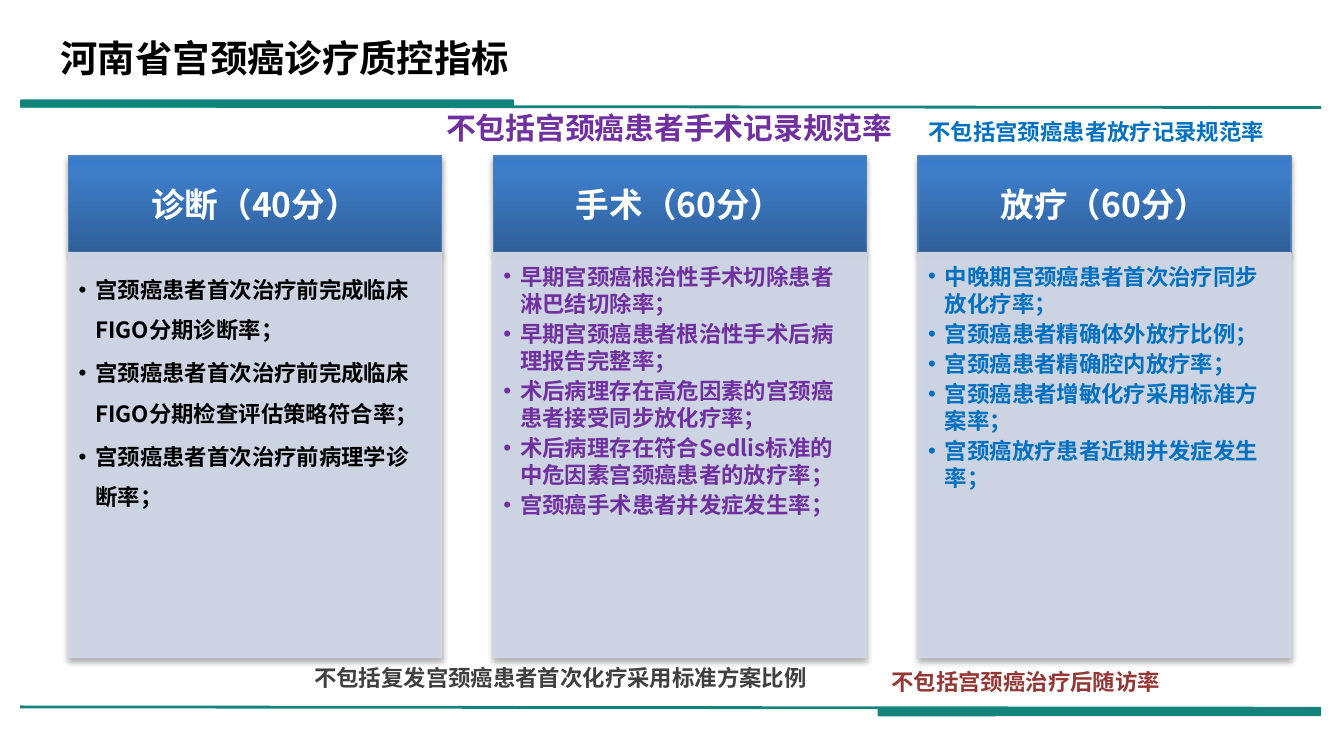
from copy import deepcopy

from pptx import Presentation
from pptx.dml.color import RGBColor
from pptx.enum.shapes import MSO_CONNECTOR, MSO_SHAPE
from pptx.enum.text import MSO_ANCHOR, MSO_AUTO_SIZE, PP_ALIGN
from pptx.oxml.ns import qn
from pptx.util import Pt
from lxml.etree import SubElement

PX = 4572  # 200 px to the inch
FONT = "Noto Sans CJK SC"
WHITE = RGBColor(0xFF, 0xFF, 0xFF)
BLACK = RGBColor(0x00, 0x00, 0x00)
GRAY = RGBColor(0x40, 0x40, 0x40)
RED = RGBColor(0x95, 0x37, 0x35)
TEAL = RGBColor(0x14, 0x83, 0x7C)
PURPLE = RGBColor(0x70, 0x30, 0xA0)
BLUE = RGBColor(0x00, 0x70, 0xC0)
EDGE = RGBColor(0x4F, 0x81, 0xBD)
PALE = RGBColor(0xD0, 0xD8, 0xE8)
STOPS = [(0, RGBColor(0x2F, 0x5F, 0x99)),
         (0.8, RGBColor(0x3D, 0x7C, 0xC7)),
         (1, RGBColor(0x3A, 0x7C, 0xCB))]

LEFT, STEP, WIDE = 102, 632, 555
TOP, HEAD, BODY = 232, 144, 603
COLUMNS = [
    ("诊断（40分）", BLACK, 21.5, [
        "宫颈癌患者首次治疗前完成临床FIGO分期诊断率；",
        "宫颈癌患者首次治疗前完成临床FIGO分期检查评估策略符合率；",
        "宫颈癌患者首次治疗前病理学诊断率；"]),
    ("手术（60分）", PURPLE, 14.4, [
        "早期宫颈癌根治性手术切除患者淋巴结切除率；",
        "早期宫颈癌患者根治性手术后病理报告完整率；",
        "术后病理存在高危因素的宫颈癌患者接受同步放化疗率；",
        "术后病理存在符合Sedlis标准的中危因素宫颈癌患者的放疗率；",
        "宫颈癌手术患者并发症发生率；"]),
    ("放疗（60分）", BLUE, 14.4, [
        "中晚期宫颈癌患者首次治疗同步放化疗率；",
        "宫颈癌患者精确体外放疗比例；",
        "宫颈癌患者精确腔内放疗率；",
        "宫颈癌患者增敏化疗采用标准方案率；",
        "宫颈癌放疗患者近期并发症发生率；"]),
]
NOTES = [
    ("不包括宫颈癌患者手术记录规范率", 16, PURPLE, (644, 153, 1002, 74)),
    ("不包括宫颈癌患者放疗记录规范率", 12, BLUE, (1362, 166, 598, 60)),
    ("不包括复发宫颈癌患者首次化疗采用标准方案比例", 12, GRAY, (448, 979, 1020, 60)),
    ("不包括宫颈癌治疗后随访率", 12, RED, (1307, 984, 708, 60)),
]


def write(shape, lines, size, color, anchor=MSO_ANCHOR.MIDDLE,
          align=PP_ALIGN.LEFT, inset=(20, 0, 20, 0), pitch=None):
    """Fill a shape with text; a pitch in points makes it a bulleted list."""
    frame = shape.text_frame
    left, top, right, bottom = [n * PX for n in inset]
    look = dict(word_wrap=True, auto_size=MSO_AUTO_SIZE.NONE,
                vertical_anchor=anchor, margin_left=left, margin_top=top,
                margin_right=right, margin_bottom=bottom)
    for key, value in look.items():
        setattr(frame, key, value)
    for i, line in enumerate(lines):
        para = frame.add_paragraph() if i else frame.paragraphs[0]
        if pitch:
            props = para._p.get_or_add_pPr()
            props.set("marL", str(25 * PX))
            props.set("indent", str(-25 * PX))
            SubElement(props, qn("a:buFont"), typeface="Arial")
            SubElement(props, qn("a:buChar"), char="•")
            para.line_spacing = Pt(pitch)
            para.space_after = Pt(1.8)
        para.alignment = align
        para.space_before = Pt(0)
        run = para.add_run()
        run.text = line
        run.font.color.rgb = color
        for key, value in dict(name=FONT, size=Pt(size), bold=True).items():
            setattr(run.font, key, value)
        SubElement(run._r.get_or_add_rPr(), qn("a:ea"), typeface=FONT)


def shade(shape):
    """Give a shape a soft shadow below it."""
    shape.shadow.inherit = False
    effects = shape._element.spPr.find(qn("a:effectLst"))
    outer = SubElement(effects, qn("a:outerShdw"), blurRad="40000",
                       dist="23000", dir="5400000", rotWithShape="0")
    black = SubElement(outer, qn("a:srgbClr"), val="000000")
    SubElement(black, qn("a:alpha"), val="35000")


deck = Presentation()
deck.slide_width, deck.slide_height = 2000 * PX, 1125 * PX
slide = deck.slides.add_slide(deck.slide_layouts[4])
shapes = slide.shapes
holders = {h.placeholder_format.idx: h for h in slide.placeholders}
spare = holders[4]._element
spare.getparent().remove(spare)

# Rules at top and bottom, each with a thick bar
for y, bar in [(158, (30, 148, 735, 12)), (1052, (1306, 1054, 660, 12))]:
    rule = shapes.add_connector(MSO_CONNECTOR.STRAIGHT, 30 * PX, y * PX,
                                1966 * PX, (y + 2) * PX)
    rule.line.color.rgb = TEAL
    rule.line.width = Pt(1.5)
    SubElement(rule._element.spPr, qn("a:effectLst"))
    thick = shapes.add_shape(MSO_SHAPE.ROUNDED_RECTANGLE, *[n * PX for n in bar])
    thick.shadow.inherit = False
    thick.fill.solid()
    thick.fill.fore_color.rgb = TEAL
    thick.line.fill.background()

title = holders[0]
spot = dict(left=70, top=42, width=1276, height=88)
for key, value in spot.items():
    setattr(title, key, value * PX)
write(title, ["河南省宫颈癌诊疗质控指标"], 20, BLACK)

for i, (name, color, pitch, items) in enumerate(COLUMNS):
    x = LEFT + i * STEP
    head = shapes.add_shape(MSO_SHAPE.RECTANGLE, x * PX, TOP * PX,
                            WIDE * PX, HEAD * PX)
    head.fill.gradient()
    head.fill.gradient_angle = 90
    ramp = head._element.spPr.find(".//" + qn("a:gsLst"))
    ramp.append(deepcopy(ramp[-1]))
    for stop, (place, tint) in zip(head.fill.gradient_stops, STOPS):
        stop.position = place
        stop.color.rgb = tint
    head.line.color.rgb = EDGE
    head.line.width = Pt(0.75)
    shade(head)
    write(head, [name], 18, WHITE, align=PP_ALIGN.CENTER, inset=(28, 16, 28, 16))

    panel = holders[i + 1]
    head._element.addnext(panel._element)  # panel covers the header's shadow
    spot = dict(left=x, top=TOP + HEAD, width=WIDE, height=BODY)
    for key, value in spot.items():
        setattr(panel, key, value * PX)
    panel.fill.solid()
    panel.fill.fore_color.rgb = PALE
    panel.line.color.rgb = PALE
    panel.line.width = Pt(0.75)
    for tint in panel._element.spPr.iter(qn("a:srgbClr")):
        SubElement(tint, qn("a:alpha"), val="90000")
    shade(panel)
    write(panel, items, 12, color, MSO_ANCHOR.TOP, inset=(15, 15, 18, 20), pitch=pitch)

for text, size, color, spot in NOTES:
    note = shapes.add_textbox(*[n * PX for n in spot])
    write(note, [text], size, color)

deck.save("out.pptx")
